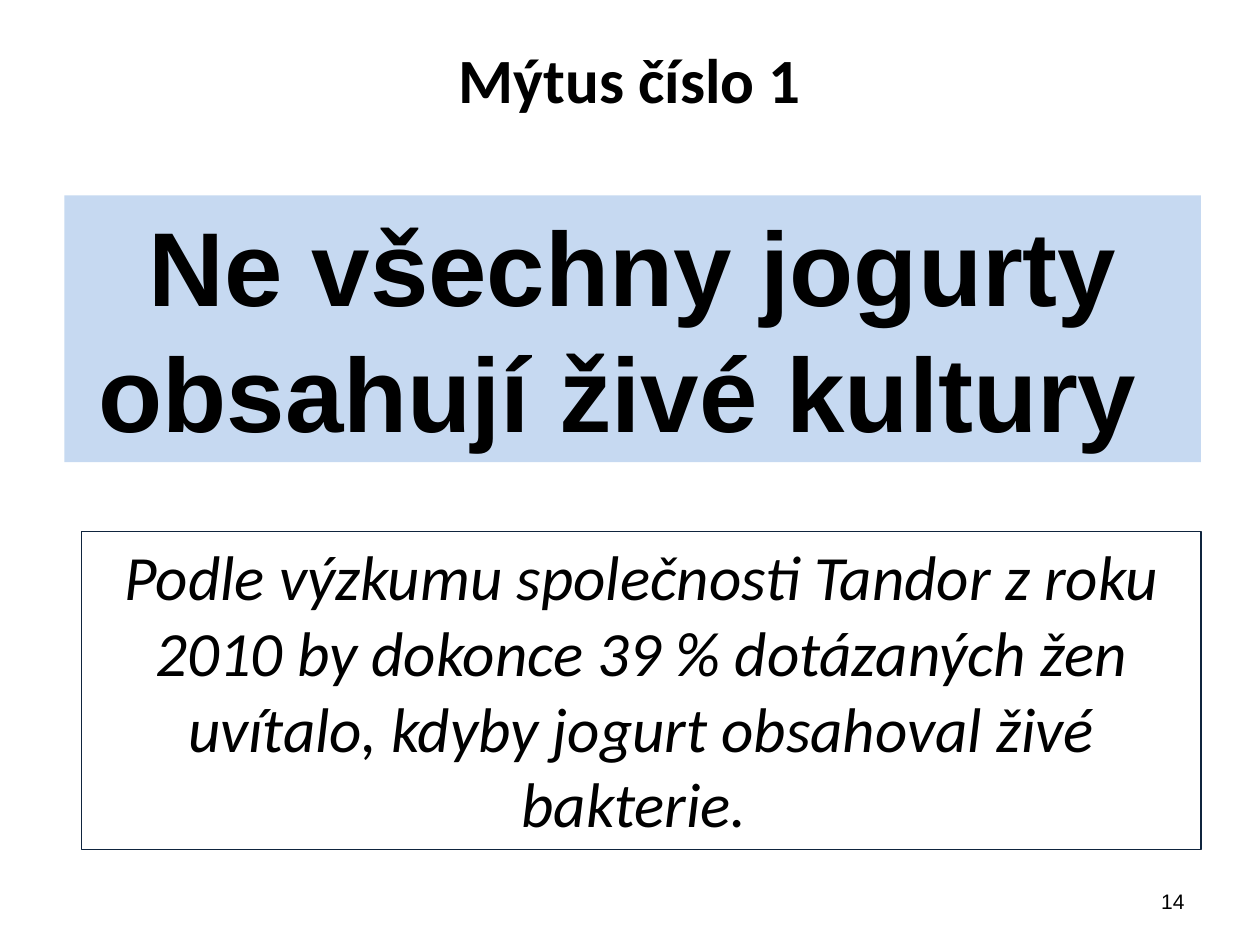
import pptx
import pptx.util
import pptx.dml.color
import pptx.enum.text
from pptx.util import Cm, Pt

ALIGN = pptx.enum.text.PP_ALIGN
ANCHOR = pptx.enum.text.MSO_ANCHOR
COLORS = {
    "text": "000000",
    "paper": "FFFFFF",
    "claim": "C6D9F1",
    "border": "0F243E",
}


def color(name):
    return pptx.dml.color.RGBColor.from_string(COLORS[name])


def fill_shape(shape, name):
    shape.fill.solid()
    shape.fill.fore_color.rgb = color(name)


def write(shape, text, font, size, align=ALIGN.CENTER, anchor=ANCHOR.TOP,
          bold=False, italic=False):
    frame = shape.text_frame
    frame.word_wrap = True
    frame.auto_size = pptx.enum.text.MSO_AUTO_SIZE.NONE
    frame.vertical_anchor = anchor
    para = frame.paragraphs[0]
    para.alignment = align
    span = para.add_run()
    span.text = text
    span.font.name = font
    span.font.size = Pt(size)
    span.font.bold = bold
    span.font.italic = italic
    span.font.color.rgb = color("text")


def add_heading(page, left, top, width, height):
    title = page.shapes.title
    title.left, title.top, title.width, title.height = left, top, width, height
    fill_shape(title, "paper")
    write(title, "Mýtus číslo 1", "Calibri", 36, anchor=ANCHOR.MIDDLE, bold=True)


def add_claim(page, *place):
    box = page.shapes.add_textbox(*place)
    fill_shape(box, "claim")
    write(box, "Ne všechny jogurty obsahují živé kultury ", "Arial", 60, bold=True)


def add_survey(page, *place):
    box = page.shapes.add_textbox(*place)
    fill_shape(box, "paper")
    box.line.color.rgb = color("border")
    box.line.width = Pt(0.75)
    write(box, "Podle výzkumu společnosti Tandor z roku 2010 by dokonce 39 % "
               "dotázaných žen uvítalo, kdyby jogurt obsahoval živé bakterie. ",
          "Calibri", 36, italic=True)


def add_page_number(page, *place):
    box = page.shapes.add_textbox(*place)
    write(box, "14", "Arial", 12, align=ALIGN.RIGHT, anchor=ANCHOR.MIDDLE)


def main():
    deck = pptx.Presentation()
    deck.slide_width, deck.slide_height = Cm(25.4), Cm(19.05)
    page = deck.slides.add_slide(deck.slide_layouts.get_by_name("Title Only"))
    add_heading(page, Cm(1.27), Cm(0.58), Cm(22.86), Cm(1.98))
    add_page_number(page, Cm(18.2), Cm(17.65), Cm(5.93), Cm(1.02))
    add_claim(page, Cm(1.3), Cm(3.94), Cm(22.91), Cm(5.38))
    add_survey(page, Cm(1.65), Cm(10.72), Cm(22.56), Cm(6.4))
    deck.save("out.pptx")


if __name__ == "__main__":
    main()
